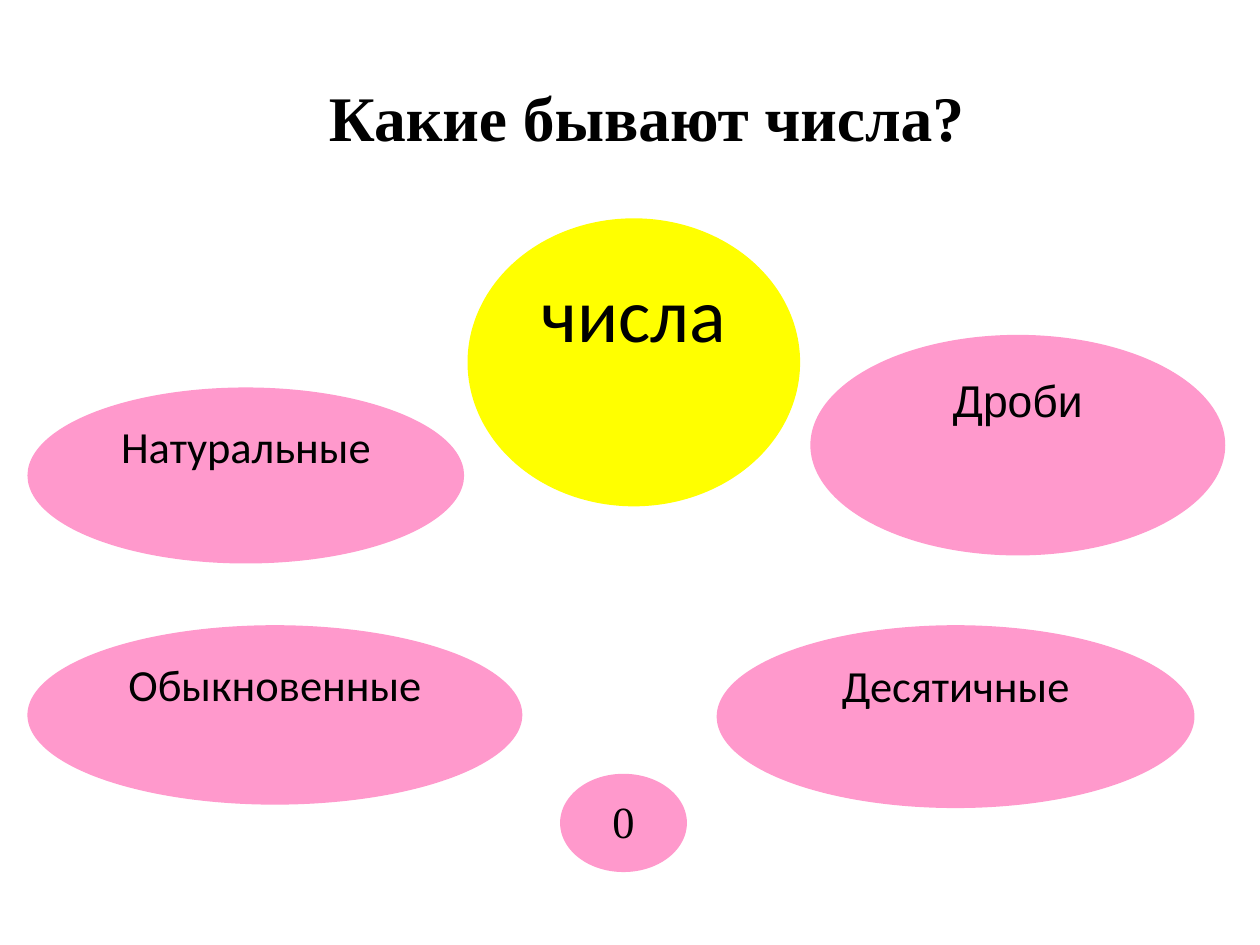
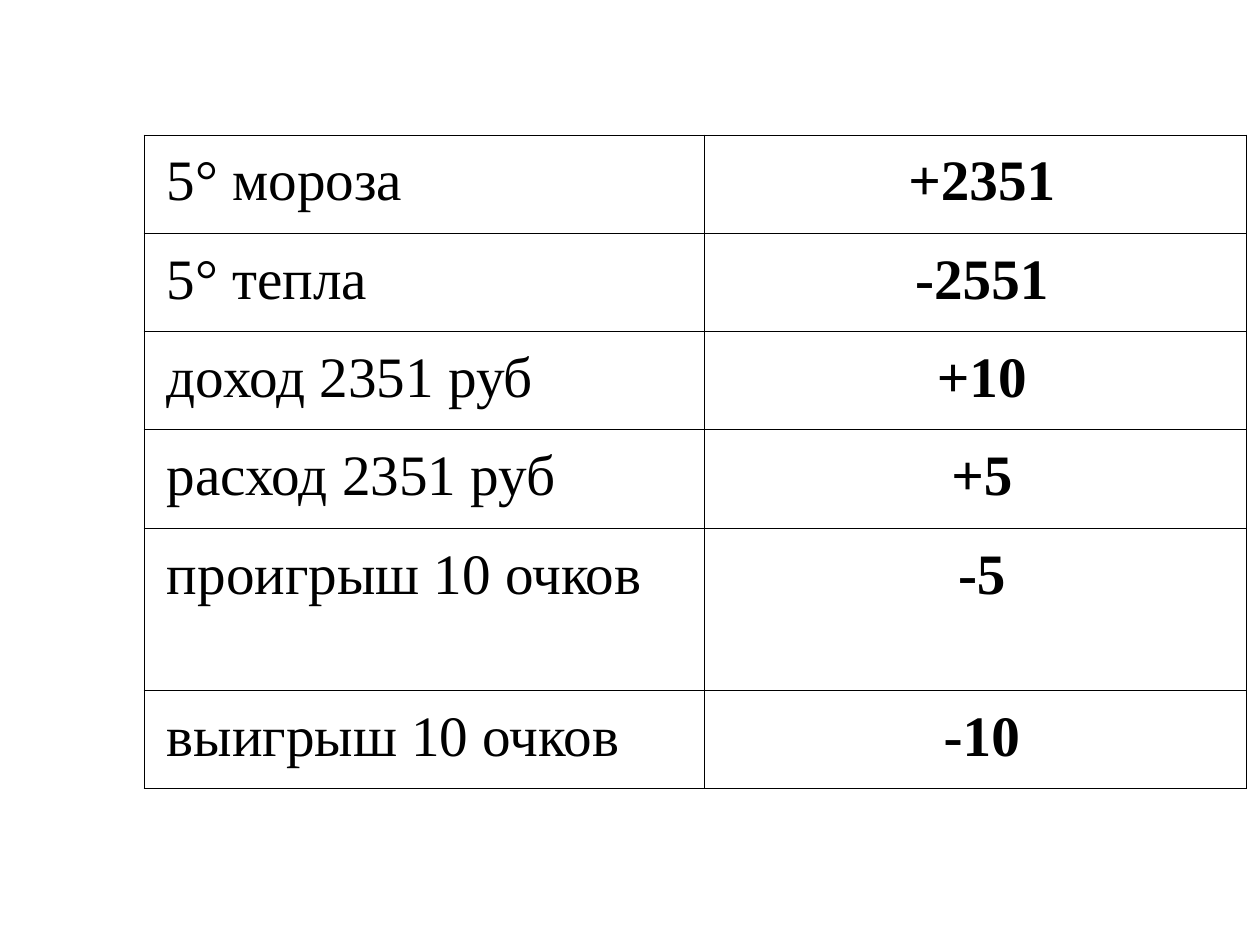
"""Build two slides: kinds of numbers and a matching table of signed values."""
from lxml.etree import SubElement
from pptx import Presentation
from pptx.dml.color import RGBColor
from pptx.enum.shapes import MSO_SHAPE as SHAPE
from pptx.enum.text import MSO_ANCHOR as ANCHOR, PP_ALIGN as ALIGN
from pptx.oxml.ns import qn
from pptx.util import Cm, Inches, Pt

COLORS = {"paper": "FFFFFF", "ink": "000000", "pink": "FF99CC", "yellow": "FFFF00"}
SERIF, SANS = "Times New Roman", "Calibri"

TITLE = "Какие бывают числа?"
OVALS = [
    ("Дроби", (7.09, 2.93, 3.63, 1.93), "pink", "Arial", 28),
    ("числа", (4.09, 1.91, 2.91, 2.52), "yellow", SANS, 48),
    ("Обыкновенные", (0.24, 5.47, 4.33, 1.57), "pink", SANS, 28),
    ("Натуральные", (0.24, 3.39, 3.82, 1.54), "pink", SANS, 28),
    ("Десятичные", (6.27, 5.47, 4.18, 1.6), "pink", SANS, 28),
    ("0", (4.9, 6.77, 1.11, 0.86), "pink", SERIF, 28),
]
ROWS = [
    ("5° мороза", "+2351"),
    ("5° тепла", "-2551"),
    ("доход 2351 руб", "+10"),
    ("расход 2351 руб", "+5"),
    ("проигрыш 10 очков", "-5"),
    ("выигрыш 10 очков", "-10"),
]
COL_WIDTHS = (4.9, 4.74)
ROW_HEIGHTS = (0.86, 0.86, 0.86, 0.86, 1.42, 0.86)


def rgb(name):
    return RGBColor.from_string(COLORS[name])


def write(p, text, align, indent=0, **font):
    p.alignment = align
    if indent:
        pPr = p._p.get_or_add_pPr()
        pPr.set("marL", str(Inches(indent)))
        pPr.set("indent", "0")
    r = p.add_run()
    r.text = text
    for key, value in font.items():
        setattr(r.font, key, value)
    r.font.color.rgb = rgb("ink")


def add_block(s, kind, box, color, anchor):
    sp = s.shapes.add_shape(kind, *map(Inches, box))
    sp.shadow.inherit = False
    sp.fill.solid()
    sp.fill.fore_color.rgb = rgb(color)
    sp.line.fill.background()
    tf = sp.text_frame
    tf.word_wrap = True
    tf.vertical_anchor = anchor
    return tf.paragraphs[0]


def set_borders(cell):
    tcPr = cell._tc.get_or_add_tcPr()
    for i, side in enumerate(("lnL", "lnR", "lnT", "lnB")):
        ln = tcPr.makeelement(qn(f"a:{side}"), {"w": str(Pt(0.45))})
        fill = SubElement(ln, qn("a:solidFill"))
        SubElement(fill, qn("a:srgbClr"), val=COLORS["ink"])
        tcPr.insert(i, ln)


def build_numbers(s):
    p = add_block(s, SHAPE.RECTANGLE, (1.26, 0.33, 9.21, 1.37), "paper", ANCHOR.MIDDLE)
    write(p, TITLE, ALIGN.LEFT, 1.52, name=SERIF, size=Pt(40), bold=True)
    for text, box, color, font, size in OVALS:
        p = add_block(s, SHAPE.OVAL, box, color, ANCHOR.TOP)
        write(p, text, ALIGN.CENTER, name=font, size=Pt(size))


def build_table(s):
    box = (1.26, 1.18, sum(COL_WIDTHS), sum(ROW_HEIGHTS))
    table = s.shapes.add_table(len(ROWS), len(COL_WIDTHS), *map(Inches, box)).table
    for col, width in zip(table.columns, COL_WIDTHS):
        col.width = Inches(width)
    for row, height, texts in zip(table.rows, ROW_HEIGHTS, ROWS):
        row.height = Inches(height)
        for cell, text, align, bold in zip(
            row.cells, texts, (ALIGN.JUSTIFY, ALIGN.CENTER), (False, True)
        ):
            cell.margin_left = cell.margin_right = Inches(0.08)
            cell.fill.background()
            set_borders(cell)
            p = cell.text_frame.paragraphs[0]
            p.line_spacing = 1.15
            write(p, text, align, 0.12, name=SERIF, size=Pt(36), bold=bold)


def main():
    prs = Presentation()
    prs.slide_width, prs.slide_height = Cm(28), Cm(21)
    for build in (build_numbers, build_table):
        s = prs.slides.add_slide(prs.slide_layouts[6])
        s.background.fill.solid()
        s.background.fill.fore_color.rgb = rgb("paper")
        build(s)
    prs.save("out.pptx")


if __name__ == "__main__":
    main()
